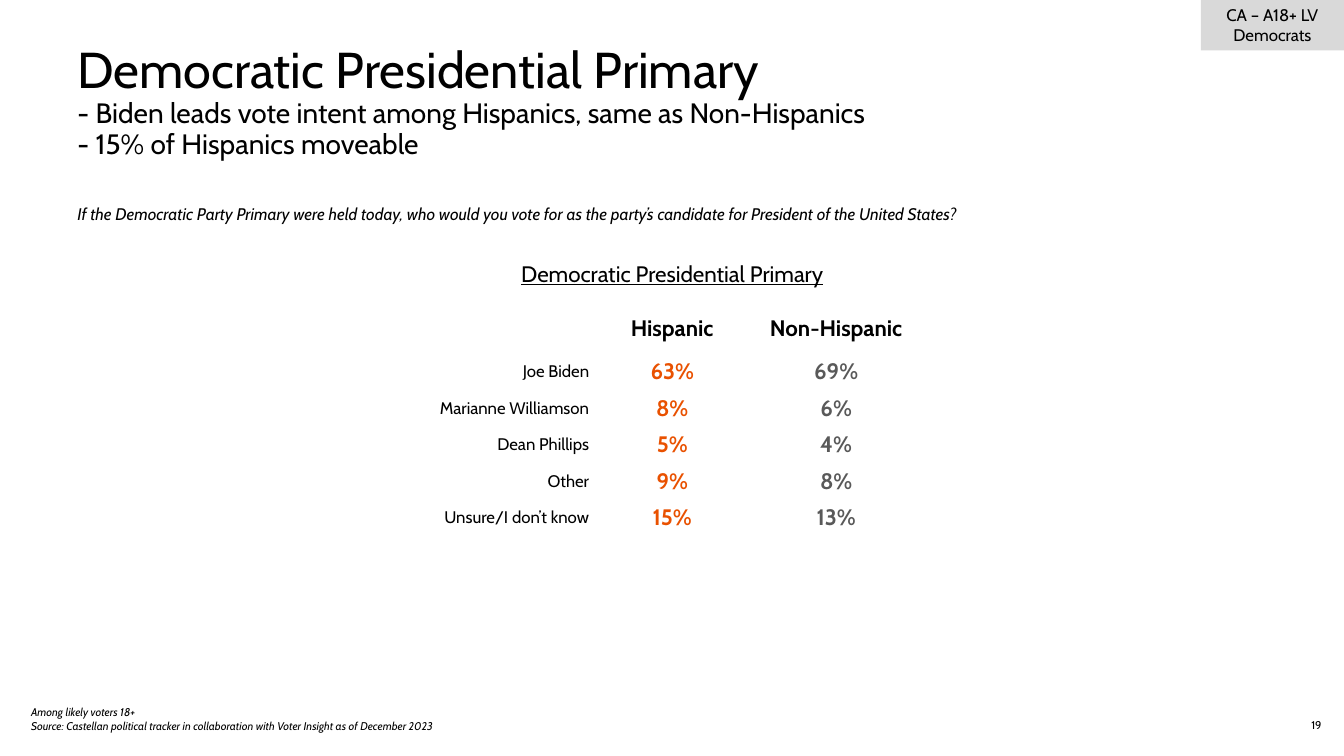
from dataclasses import dataclass

from pptx import Presentation
from pptx.dml.color import RGBColor
from pptx.enum import shapes, text
from pptx.util import Pt


@dataclass(frozen=True)
class Theme:
    font: str = "Cabin"
    black: str = "000000"
    orange: str = "E95100"
    gray: str = "595959"
    tag_fill: str = "D9D9D9"
    title: int = 36
    subtitle: int = 20
    heading: int = 16
    body: int = 12
    note: int = 8


THEME = Theme()
ALIGN = text.PP_ALIGN
MIDDLE = text.MSO_ANCHOR.MIDDLE

RESULTS = [
    ("Joe Biden", "63%", "69%"),
    ("Marianne Williamson", "8%", "6%"),
    ("Dean Phillips", "5%", "4%"),
    ("Other", "9%", "8%"),
    ("Unsure/I don’t know", "15%", "13%"),
]


def format_text(frame, size, align=ALIGN.LEFT, color=THEME.black, **styles):
    for paragraph in frame.paragraphs:
        paragraph.alignment = align
        for run in paragraph.runs:
            run.font.name = THEME.font
            run.font.size = Pt(size)
            run.font.color.rgb = RGBColor.from_string(color)
            for name, value in styles.items():
                setattr(run.font, name, value)


def add_text(slide, box, content, size, anchor=text.MSO_ANCHOR.TOP, **styles):
    shape = slide.shapes.add_textbox(*map(Pt, box))
    frame = shape.text_frame
    frame.word_wrap = True
    frame.vertical_anchor = anchor
    frame.text = content
    format_text(frame, size, **styles)
    return frame


def add_title(slide):
    frame = add_text(
        slide, (48.24, 28.8, 864, 110.16),
        "Democratic Presidential Primary\v"
        "- Biden leads vote intent among Hispanics, same as Non-Hispanics\v"
        "- 15% of Hispanics moveable",
        THEME.subtitle)
    paragraph = frame.paragraphs[0]
    paragraph.line_spacing = 0.9
    paragraph.runs[0].font.size = Pt(THEME.title)


def add_audience_tag(slide):
    shape = slide.shapes.add_shape(
        shapes.MSO_SHAPE.RECTANGLE, Pt(857.75), Pt(0), Pt(102.25), Pt(36))
    shape.shadow.inherit = False
    shape.fill.solid()
    shape.fill.fore_color.rgb = RGBColor.from_string(THEME.tag_fill)
    shape.line.fill.background()
    frame = shape.text_frame
    frame.word_wrap = True
    frame.vertical_anchor = MIDDLE
    frame.text = "CA – A18+ LV\nDemocrats"
    format_text(frame, THEME.body, ALIGN.CENTER)


def fill_cell(cell, content, size, align, color, bold):
    cell.fill.background()
    cell.vertical_anchor = MIDDLE
    cell.text = content
    format_text(cell.text_frame, size, align, color, bold=bold)


def add_results_table(slide):
    column_width, header_height, row_height = 117.12, 35.3, 26.1
    table = slide.shapes.add_table(
        len(RESULTS) + 1, 3, Pt(304.5), Pt(216.72), Pt(3 * column_width),
        Pt(header_height + len(RESULTS) * row_height)).table
    table.first_row = table.horz_banding = False
    for column in table.columns:
        column.width = Pt(column_width)
    for row in table.rows:
        row.height = Pt(row_height)
    table.rows[0].height = Pt(header_height)

    for column, label in enumerate(("", "Hispanic", "Non-Hispanic")):
        fill_cell(table.cell(0, column), label, THEME.heading,
                  ALIGN.CENTER, THEME.black, True)

    column_styles = (
        (THEME.body, ALIGN.RIGHT, THEME.black, False),
        (THEME.heading, ALIGN.CENTER, THEME.orange, True),
        (THEME.heading, ALIGN.CENTER, THEME.gray, True),
    )
    for row, result in enumerate(RESULTS, 1):
        for column, (value, style) in enumerate(zip(result, column_styles)):
            cell = table.cell(row, column)
            cell.margin_left = cell.margin_right = cell.margin_top = Pt(0.75)
            cell.margin_bottom = Pt(0)
            fill_cell(cell, value, *style)


def main():
    presentation = Presentation()
    presentation.slide_width, presentation.slide_height = Pt(960), Pt(540)
    slide = presentation.slides.add_slide(presentation.slide_layouts[6])

    add_text(slide, (887.76, 509.76, 63.36, 19.44), "19", THEME.note,
             align=ALIGN.RIGHT)
    add_text(slide, (15.12, 500.4, 367.92, 28.8),
             "Among likely voters 18+\vSource: Castellan political tracker in "
             "collaboration with Voter Insight as of December 2023",
             THEME.note, italic=True)
    add_audience_tag(slide)
    question = add_text(
        slide, (48.24, 138.96, 864, 28.8),
        "If the Democratic Party Primary were held today, who would you vote "
        "for as the party’s candidate for President of the United States?",
        THEME.body, MIDDLE, italic=True)
    question.paragraphs[0].line_spacing = 0.9
    add_text(slide, (66.24, 174.24, 828, 42.48),
             "Democratic Presidential Primary", THEME.heading, MIDDLE,
             align=ALIGN.CENTER, underline=True)
    add_results_table(slide)
    add_title(slide)
    presentation.save("out.pptx")


if __name__ == "__main__":
    main()
